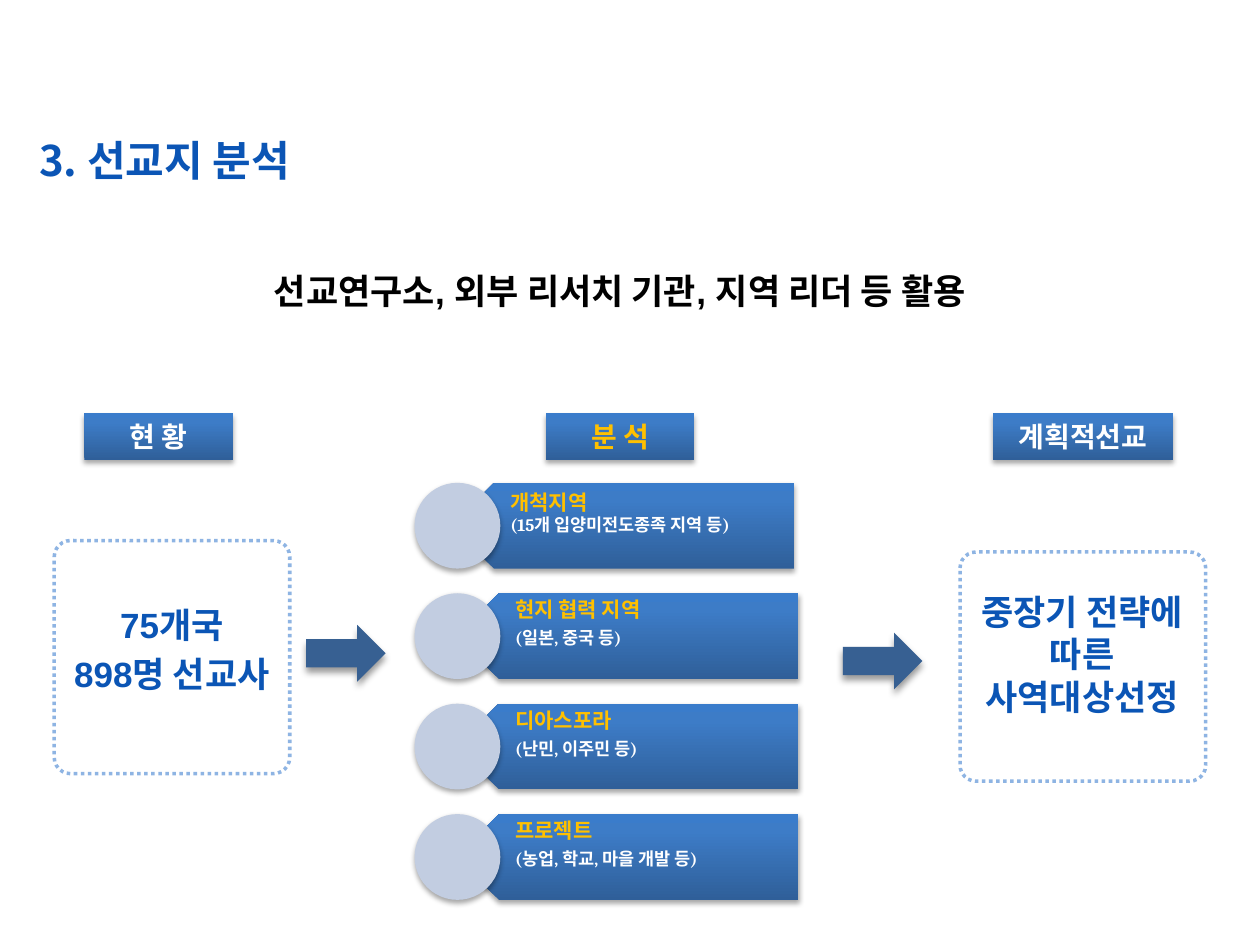
import pptx
import pptx.util
import pptx.dml.color
import pptx.enum.dml
import pptx.enum.shapes
import pptx.enum.text
from lxml import etree

Pt = pptx.util.Pt
RGBColor = pptx.dml.color.RGBColor
SHAPE = pptx.enum.shapes.MSO_SHAPE
ALIGN = pptx.enum.text.PP_ALIGN
ANCHOR = pptx.enum.text.MSO_ANCHOR

BLUE = RGBColor(0x0B, 0x55, 0xB5)
GOLD = RGBColor(0xFF, 0xC0, 0x00)
WHITE = RGBColor(0xFF, 0xFF, 0xFF)
BLACK = RGBColor(0x00, 0x00, 0x00)
PALE = RGBColor(0xC2, 0xCD, 0xE1)
ARROW_BLUE = RGBColor(0x37, 0x60, 0x92)
DOT_BLUE = RGBColor(0x8E, 0xB4, 0xE3)
GRADIENT = [
    (0, RGBColor(0x2F, 0x5F, 0x99)),
    (80, RGBColor(0x3D, 0x7C, 0xC7)),
    (100, RGBColor(0x3A, 0x7C, 0xCB)),
]
NAMESPACE = "http://schemas.openxmlformats.org/drawingml/2006/main"
SOFT_SHADOW = (35, 3.1, 1.8)
ARROW_SHADOW = (40, 4, 3)

KOREAN = "Noto Sans CJK KR"
TITLE = {"name": KOREAN, "size": Pt(24), "bold": True, "color": BLUE}
SUMMARY = {"name": "Arial", "size": Pt(20), "bold": True, "color": BLACK}
BODY = {**SUMMARY, "color": BLUE}
LABEL = {"name": KOREAN, "size": Pt(16), "bold": True, "color": WHITE}
AREA = {"name": "Cambria", "size": Pt(12), "bold": True, "color": GOLD}
DETAIL = {**AREA, "size": Pt(10), "color": WHITE}
CENTER = {"alignment": ALIGN.CENTER}
TIGHT = {"line_spacing": 0.9}

TEXTS = [
    ((22.3, 77, 162, 28.8), 0, [("3. 선교지 분석", TITLE, {})]),
    ((48.2, 150.5, 612, 31.7), None,
     [("선교연구소, 외부 리서치 기관, 지역 리더 등 활용", SUMMARY, CENTER)]),
    ((38.2, 344.9, 120.2, 53.3), 0,
     [("75개국", BODY, CENTER),
      ("898명 선교사", BODY, {**CENTER, "space_before": Pt(4)})]),
    ((555.8, 337.7, 125.3, 72.7), 0,
     [("중장기 전략에 따른 사역대상선정", BODY, CENTER)]),
]
LABELS = [
    ("현 황", 48.2, 85, WHITE),
    ("분 석", 311.8, 85, GOLD),
    ("계획적선교", 567.4, 103, WHITE),
]
AREAS = [
    ("개척지역", "(15개 입양미전도종족 지역 등)"),
    ("현지 협력 지역", "(일본, 중국 등)"),
    ("디아스포라", "(난민, 이주민 등)"),
    ("프로젝트", "(농업, 학교, 마을 개발 등)"),
]
FRAMES = [(31, 308.9, 134.6, 133.2), (548.6, 315.4, 140.4, 131)]
ARROWS = [(181.4, 350.6, 32.4, 45.4), (488.2, 355, 32.4, 45.4)]
LABEL_TOP, LABEL_HEIGHT = 236.2, 26.6
AREA_TOP, AREA_PITCH, AREA_HEIGHT = 275.9, 63.1, 49
CIRCLE_LEFT = 236.9

presentation = pptx.Presentation()
presentation.slide_width, presentation.slide_height = Pt(720), Pt(540)
slide = presentation.slides.add_slide(presentation.slide_layouts[6])


def child(parent, tag, **attributes):
    return etree.SubElement(parent, f"{{{NAMESPACE}}}{tag}", attributes)


def write(shape, paragraphs, insets=None):
    frame = shape.text_frame
    frame.word_wrap = True
    if insets:
        for side, value in zip(("left", "top", "right", "bottom"), insets):
            setattr(frame, f"margin_{side}", Pt(value))
    for index, (text, font, layout) in enumerate(paragraphs):
        paragraph = frame.add_paragraph() if index else frame.paragraphs[0]
        for name, value in layout.items():
            setattr(paragraph, name, value)
        run = paragraph.add_run()
        run.text = text
        for name, value in font.items():
            if name == "color":
                run.font.color.rgb = value
            else:
                setattr(run.font, name, value)


def add_text(box, paragraphs, insets=None):
    write(slide.shapes.add_textbox(*map(Pt, box)), paragraphs, insets)


def add_shape(kind, box, fill=None, shadow=None, rotation=0):
    shape = slide.shapes.add_shape(kind, *map(Pt, box))
    shape.rotation = rotation
    shape.shadow.inherit = False
    shape.line.fill.background()
    if fill is None:
        shape.fill.background()
    elif fill is GRADIENT:
        add_gradient(shape)
    else:
        shape.fill.solid()
        shape.fill.fore_color.rgb = fill
    if shadow:
        add_shadow(shape, *shadow)
    return shape


def add_gradient(shape):
    shape.fill.gradient()
    gradient = shape._element.spPr.find(f"{{{NAMESPACE}}}gradFill")
    gradient.set("rotWithShape", "0")
    for element in list(gradient):
        gradient.remove(element)
    stops = child(gradient, "gsLst")
    for position, color in GRADIENT:
        stop = child(stops, "gs", pos=str(position * 1000))
        child(stop, "srgbClr", val=str(color))
    child(gradient, "lin", ang=str(270 * 60000), scaled="0")


def add_shadow(shape, opacity, blur, distance):
    effects = shape._element.spPr.find(f"{{{NAMESPACE}}}effectLst")
    shadow = child(effects, "outerShdw", blurRad=str(int(Pt(blur))),
                   dist=str(int(Pt(distance))), dir=str(90 * 60000),
                   rotWithShape="0")
    color = child(shadow, "srgbClr", val=str(BLACK))
    child(color, "alpha", val=str(opacity * 1000))


for index, (area, detail) in enumerate(AREAS):
    top = AREA_TOP + index * AREA_PITCH
    left = 260.6 if index else 257.8
    spacing = TIGHT if index else {}
    after = {"space_after": Pt(4.2)} if index else {}
    add_shape(SHAPE.PENTAGON, (left, top, 195.8, AREA_HEIGHT), GRADIENT, SOFT_SHADOW, 180)
    add_text((left + 12.2, top, 183.6, AREA_HEIGHT),
             [(area, AREA, {**spacing, **after}), (detail, DETAIL, spacing)],
             (21.6, 3.6, 6.5, 3.6))
    add_shape(SHAPE.OVAL, (CIRCLE_LEFT, top, AREA_HEIGHT, AREA_HEIGHT), PALE, SOFT_SHADOW)

for box in ARROWS:
    add_shape(SHAPE.UP_ARROW, box, ARROW_BLUE, ARROW_SHADOW, 90)

for box in FRAMES:
    frame = add_shape(SHAPE.ROUNDED_RECTANGLE, box)
    frame.adjustments[0] = 0.07
    frame.line.color.rgb = DOT_BLUE
    frame.line.width = Pt(2)
    frame.line.dash_style = pptx.enum.dml.MSO_LINE.ROUND_DOT

for box, inset, paragraphs in TEXTS:
    add_text(box, paragraphs, None if inset is None else (inset,) * 4)

for text, left, width, color in LABELS:
    label = add_shape(SHAPE.RECTANGLE, (left, LABEL_TOP, width, LABEL_HEIGHT), GRADIENT, SOFT_SHADOW)
    label.text_frame.vertical_anchor = ANCHOR.MIDDLE
    write(label, [(text, {**LABEL, "color": color}, CENTER)])

presentation.save("out.pptx")
